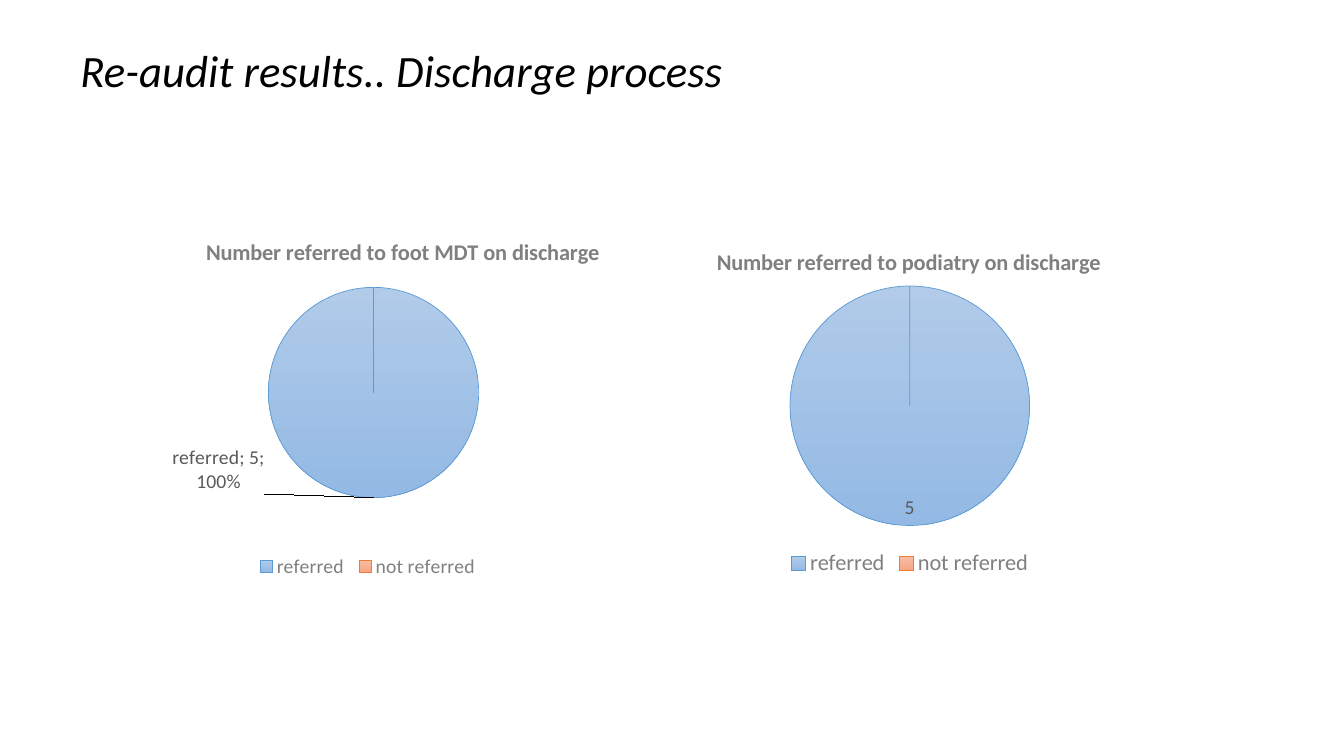
from dataclasses import dataclass
from typing import Optional

from lxml import etree
from pptx import Presentation
from pptx.chart.chart import Chart
from pptx.chart.data import CategoryChartData
from pptx.dml.color import RGBColor
from pptx.enum.chart import XL_CHART_TYPE, XL_LABEL_POSITION, XL_LEGEND_POSITION
from pptx.enum.text import MSO_ANCHOR
from pptx.oxml import parse_xml
from pptx.oxml.ns import qn
from pptx.slide import Slide
from pptx.util import Inches, Pt

PIE = XL_CHART_TYPE.PIE
BOTTOM = XL_LEGEND_POSITION.BOTTOM
OUTSIDE_END = XL_LABEL_POSITION.OUTSIDE_END
INSIDE_END = XL_LABEL_POSITION.INSIDE_END
MIDDLE = MSO_ANCHOR.MIDDLE
CHART_NS = "http://schemas.openxmlformats.org/drawingml/2006/chart"


@dataclass(frozen=True)
class SliceStyle:
    top: str
    bottom: str
    line: str


@dataclass(frozen=True)
class Theme:
    font: str = "Calibri"
    black: str = "000000"
    grey: str = "808080"
    label_grey: str = "595959"
    title_size: int = 32
    chart_title_size: int = 16
    label_size: int = 14
    base_size: int = 10
    slices: tuple[SliceStyle, ...] = (
        SliceStyle("B1CBE9", "93B9E4", "5B9BD5"),
        SliceStyle("F7BDA5", "F8A582", "ED7D31"),
    )


@dataclass(frozen=True)
class PieSpec:
    """Box in inches; the places inside it are fractions of the chart."""
    title: str
    box: tuple[float, float, float, float]
    title_place: tuple[float, ...]
    pie_place: tuple[float, ...]
    legend_place: tuple[float, ...]
    legend_size: int
    label_position: XL_LABEL_POSITION
    detailed_label: bool = False
    label_shift: Optional[tuple[float, float]] = None


THEME = Theme()
CATEGORIES = ("referred", "not referred")
COUNTS = (5, 0)
PIES = (
    PieSpec("Number referred to foot MDT on discharge", (0.96, 2.19, 5.49, 3.83),
            (0.19, 0.03), (0.31, 0.17, 0.38, 0.55), (0.28, 0.86, 0.42, 0.07),
            14, OUTSIDE_END, True, (-0.28, -0.15)),
    PieSpec("Number referred to podiatry on discharge", (6.31, 2.19, 5.43, 3.6),
            (0.14, 0.06), (0.28, 0.18, 0.44, 0.66), (0.27, 0.9, 0.46, 0.09),
            16, INSIDE_END),
)


def style_font(font, size: int, color: str, bold: bool = False, italic: bool = False) -> None:
    font.name = THEME.font
    font.size = Pt(size)
    font.bold = bold
    font.italic = italic
    font.color.rgb = RGBColor.from_string(color)


def manual_layout(place: tuple[float, ...], modes: str = "") -> etree._Element:
    sizes = "".join(f'<c:{tag} val="{value}"/>' for tag, value in zip("xywh", place))
    return parse_xml(f'<c:layout xmlns:c="{CHART_NS}"><c:manualLayout>{modes}{sizes}'
                     "</c:manualLayout></c:layout>")


def place_part(chart: Chart, tag: str, index: int, place: tuple[float, ...]) -> None:
    """Fix a chart part in place; index is where the schema wants its layout."""
    part = chart.element.find(f".//{qn(tag)}")
    for old in part.findall(qn("c:layout")):
        part.remove(old)
    target = '<c:layoutTarget val="inner"/>' if tag == "c:plotArea" else ""
    modes = '<c:xMode val="edge"/><c:yMode val="edge"/>'
    part.insert(index, manual_layout(place, target + modes))


def style_labels(chart: Chart, pie: PieSpec) -> None:
    """Label the filled slice only, shifted where the pie asks for it."""
    series = chart.plots[0].series[0]
    labels = series.data_labels
    style_font(labels.font, THEME.label_size, THEME.label_grey)
    labels.position = pie.label_position
    labels.show_value = True
    labels.show_category_name = pie.detailed_label
    labels.show_percentage = pie.detailed_label
    group = chart.element.find(f".//{qn('c:ser')}/{qn('c:dLbls')}")
    group.insert(0, parse_xml(f'<c:dLbl xmlns:c="{CHART_NS}"><c:idx val="1"/>'
                              '<c:delete val="1"/></c:dLbl>'))
    if pie.label_shift:
        shown = "".join(f'<c:show{part} val="{value}"/>' for part, value in (
            ("LegendKey", 0), ("Val", 1), ("CatName", 1),
            ("SerName", 0), ("Percent", 1), ("BubbleSize", 0)))
        label = parse_xml(f'<c:dLbl xmlns:c="{CHART_NS}"><c:idx val="0"/>'
                          f'<c:dLblPos val="outEnd"/>{shown}'
                          "<c:separator>; </c:separator></c:dLbl>")
        label.insert(1, manual_layout(pie.label_shift))
        group.insert(0, label)
    leader = group.find(qn("c:showLeaderLines"))
    if leader is None:
        leader = etree.SubElement(group, qn("c:showLeaderLines"))
    leader.set("val", "1")


def add_pie(page: Slide, pie: PieSpec) -> None:
    data = CategoryChartData()
    data.categories = CATEGORIES
    data.add_series("Series 1", COUNTS)
    chart = page.shapes.add_chart(PIE, *map(Inches, pie.box), data).chart
    style_font(chart.font, THEME.base_size, THEME.black)

    chart.has_title = True
    title = chart.chart_title.text_frame
    title.text = pie.title
    style_font(title.paragraphs[0].runs[0].font, THEME.chart_title_size, THEME.grey, bold=True)

    chart.has_legend = True
    chart.legend.position = BOTTOM
    chart.legend.include_in_layout = False
    style_font(chart.legend.font, pie.legend_size, THEME.grey)

    plot = chart.plots[0]
    plot.vary_by_categories = True
    for index, style in enumerate(THEME.slices):
        look = plot.series[0].points[index].format
        look.fill.gradient()
        look.fill.gradient_angle = 270
        for stop, color in zip(look.fill.gradient_stops, (style.top, style.bottom)):
            stop.color.rgb = RGBColor.from_string(color)
        look.line.color.rgb = RGBColor.from_string(style.line)
        look.line.width = Pt(0.5)
    style_labels(chart, pie)

    place_part(chart, "c:title", 1, pie.title_place)
    place_part(chart, "c:plotArea", 0, pie.pie_place)
    place_part(chart, "c:legend", 1, pie.legend_place)


def add_heading(page: Slide, text: str) -> None:
    box = page.shapes.add_textbox(Inches(0.7), 0, Inches(11.5), Inches(1.45))
    frame = box.text_frame
    frame.word_wrap = True
    frame.vertical_anchor = MIDDLE
    frame.text = text
    para = frame.paragraphs[0]
    para.line_spacing = 0.9
    style_font(para.runs[0].font, THEME.title_size, THEME.black, italic=True)


def main() -> None:
    deck = Presentation()
    deck.slide_width, deck.slide_height = Inches(13.33), Inches(7.5)
    page = deck.slides.add_slide(deck.slide_layouts[6])
    add_heading(page, "Re-audit results.. Discharge process")
    for pie in PIES:
        add_pie(page, pie)
    deck.save("out.pptx")


if __name__ == "__main__":
    main()
